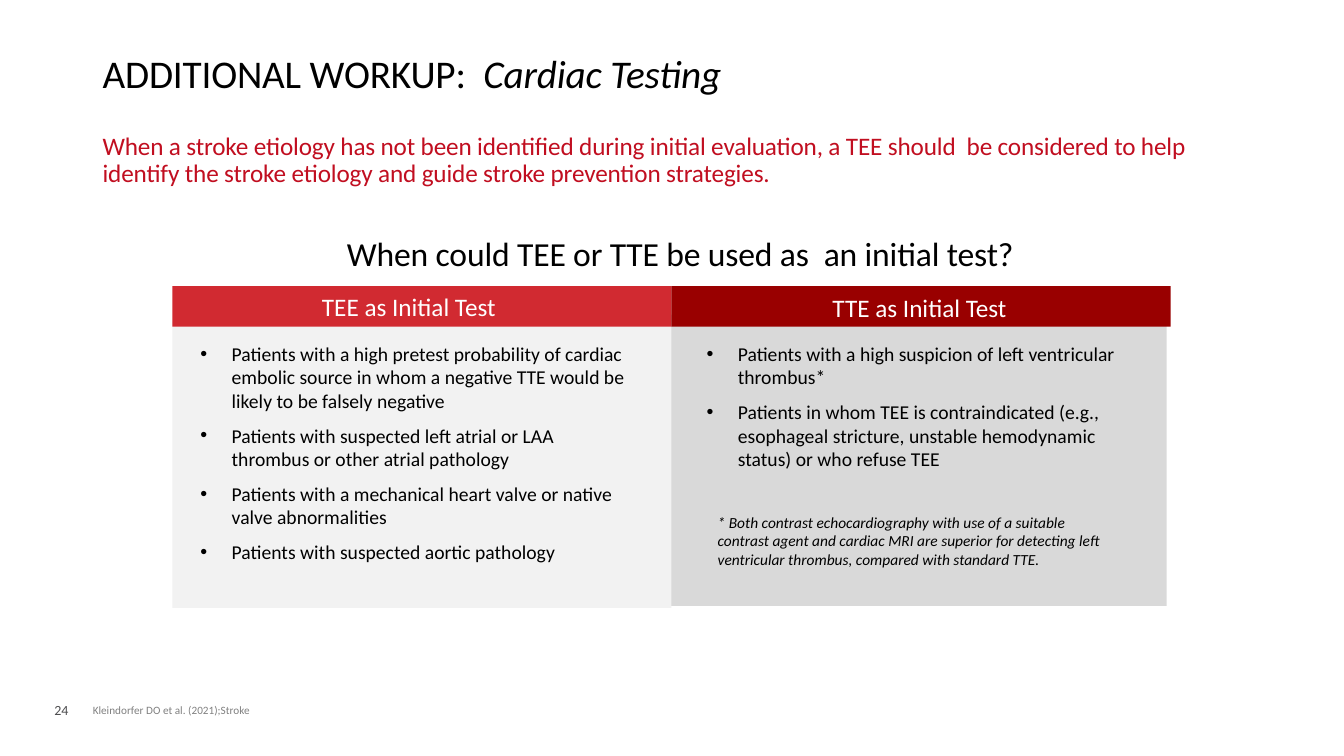
from lxml import etree
from pptx import Presentation
from pptx.dml.color import RGBColor
from pptx.enum.shapes import MSO_SHAPE
from pptx.enum.text import MSO_ANCHOR, PP_ALIGN
from pptx.oxml.ns import qn
from pptx.util import Inches, Pt

RECT = MSO_SHAPE.RECTANGLE
TOP, BOTTOM = MSO_ANCHOR.TOP, MSO_ANCHOR.BOTTOM
LEFT, CENTER = PP_ALIGN.LEFT, PP_ALIGN.CENTER

FONT = "Calibri"
BLACK, WHITE, RED, GRAY = "000000", "FFFFFF", "C10E20", "808080"
TIGHT = -0.1  # letter spacing in points
PAD = (0.1, 0.05, 0.1, 0.05)

MARGIN, BODY_W = 0.92, 11.5
COL_X, COL_W = 1.71, 4.95
HEAD_Y, HEAD_H = 2.84, 0.4
LIST_Y = HEAD_Y + 0.5

TEE_USES = [
    "Patients with a high pretest probability of cardiac embolic source in whom "
    "a negative TTE would be likely to be falsely negative",
    "Patients with suspected left atrial or LAA thrombus or other atrial pathology",
    "Patients with a mechanical heart valve or native valve abnormalities",
    "Patients with suspected aortic pathology",
]
TTE_USES = [
    "Patients with a high suspicion of left ventricular thrombus*",
    "Patients in whom TEE is contraindicated (e.g., esophageal stricture, "
    "unstable hemodynamic status) or who refuse TEE",
]
FOOTNOTE = (
    "* Both contrast echocardiography with use of a suitable contrast agent and "
    "cardiac MRI are superior for detecting left ventricular thrombus, compared "
    "with standard TTE."
)


def rgb(value):
    return RGBColor.from_string(value)


def column_x(index):
    return COL_X + index * COL_W


def style_run(r, size, color, italic=False, spacing=0):
    r.font.name = FONT
    r.font.size = Pt(size)
    r.font.color.rgb = rgb(color)
    r.font.italic = italic
    if spacing:
        r._r.get_or_add_rPr().set("spc", str(round(spacing * 100)))


def set_indent(p, margin, first=0):
    pPr = p._p.get_or_add_pPr()
    pPr.set("marL", str(Inches(margin)))
    pPr.set("indent", str(Inches(first)))
    return pPr


def add_text(s, box, text, size, color=BLACK, align=LEFT, anchor=TOP, pad=PAD,
             italic=False, spacing=0, line=None):
    """Add a one-paragraph text box and return its paragraph."""
    tf = s.shapes.add_textbox(*map(Inches, box)).text_frame
    tf.word_wrap = True
    tf.vertical_anchor = anchor
    tf.margin_left, tf.margin_top, tf.margin_right, tf.margin_bottom = map(Inches, pad)
    p = tf.paragraphs[0]
    p.text = text
    p.alignment = align
    if line:
        p.line_spacing = line
    style_run(p.runs[0], size, color, italic, spacing)
    return p


def add_bullets(s, box, items):
    tf = s.shapes.add_textbox(*map(Inches, box)).text_frame
    tf.word_wrap = True
    for i, item in enumerate(items):
        p = tf.add_paragraph() if i else tf.paragraphs[0]
        p.text = item
        if i:
            p.space_before = Pt(8)
        pPr = set_indent(p, 0.31, -0.31)
        etree.SubElement(pPr, qn("a:buFont")).set("typeface", "Arial")
        etree.SubElement(pPr, qn("a:buChar")).set("char", "•")
        style_run(p.runs[0], 14, BLACK)


def add_block(s, box, color):
    sp = s.shapes.add_shape(RECT, *map(Inches, box))
    sp.shadow.inherit = False
    sp.fill.solid()
    sp.fill.fore_color.rgb = rgb(color)
    sp.line.fill.background()


def add_heading(s):
    p = add_text(s, (MARGIN, 0.4, BODY_W, 0.61), "ADDITIONAL WORKUP:  ", 28,
                 anchor=BOTTOM, spacing=TIGHT, line=0.9)
    r = p.add_run()
    r.text = "Cardiac Testing"
    style_run(r, 28, BLACK, italic=True, spacing=TIGHT)

    add_text(s, (MARGIN, 1.28, BODY_W, 0.65),
             "When a stroke etiology has not been identified during initial "
             "evaluation, a TEE should  be considered to help identify the stroke "
             "etiology and guide stroke prevention strategies.",
             18, RED, spacing=TIGHT, line=0.9)

    p = add_text(s, (1.06, 2.26, 11.2, 0.45),
                 "When could TEE or TTE be used as  an initial test?", 24,
                 align=CENTER, pad=(0, 0.05, 0, 0), spacing=TIGHT)
    set_indent(p, 0.17)


def add_comparison(s):
    add_block(s, (6.62, 3.12, COL_W, 2.89), "D9D9D9")
    add_block(s, (COL_X, 3.19, COL_W, 2.84), "F2F2F2")
    for i, color in enumerate(("D12A31", "990000")):
        add_block(s, (column_x(i), HEAD_Y, COL_W, HEAD_H), color)

    add_text(s, (2.51, HEAD_Y, 3.09, HEAD_H), "TEE as Initial Test", 18, WHITE, CENTER)
    add_text(s, (7.96, HEAD_Y + 0.01, 2.32, HEAD_H), "TTE as Initial Test", 18, WHITE, CENTER)
    add_bullets(s, (column_x(0) + 0.18, LIST_Y, 4.47, 2.56), TEE_USES)
    add_bullets(s, (column_x(1) + 0.25, LIST_Y, 4.38, 1.39), TTE_USES)
    add_text(s, (7.02, 5.04, 4.17, 0.84), FOOTNOTE, 11, italic=True)


def add_footer(s):
    add_text(s, (0.44, 6.91, 0.39, 0.27), "24", 10, "4D4D4F")
    add_text(s, (MARGIN, 6.98, 9.38, 0.13), "Kleindorfer DO et al. (2021);Stroke",
             8, GRAY, pad=(0, 0, 0, 0))


def main():
    prs = Presentation()
    prs.slide_width, prs.slide_height = Inches(13.33), Inches(7.5)
    s = prs.slides.add_slide(prs.slide_layouts[6])
    add_heading(s)
    add_comparison(s)
    add_footer(s)
    prs.save("out.pptx")


if __name__ == "__main__":
    main()
